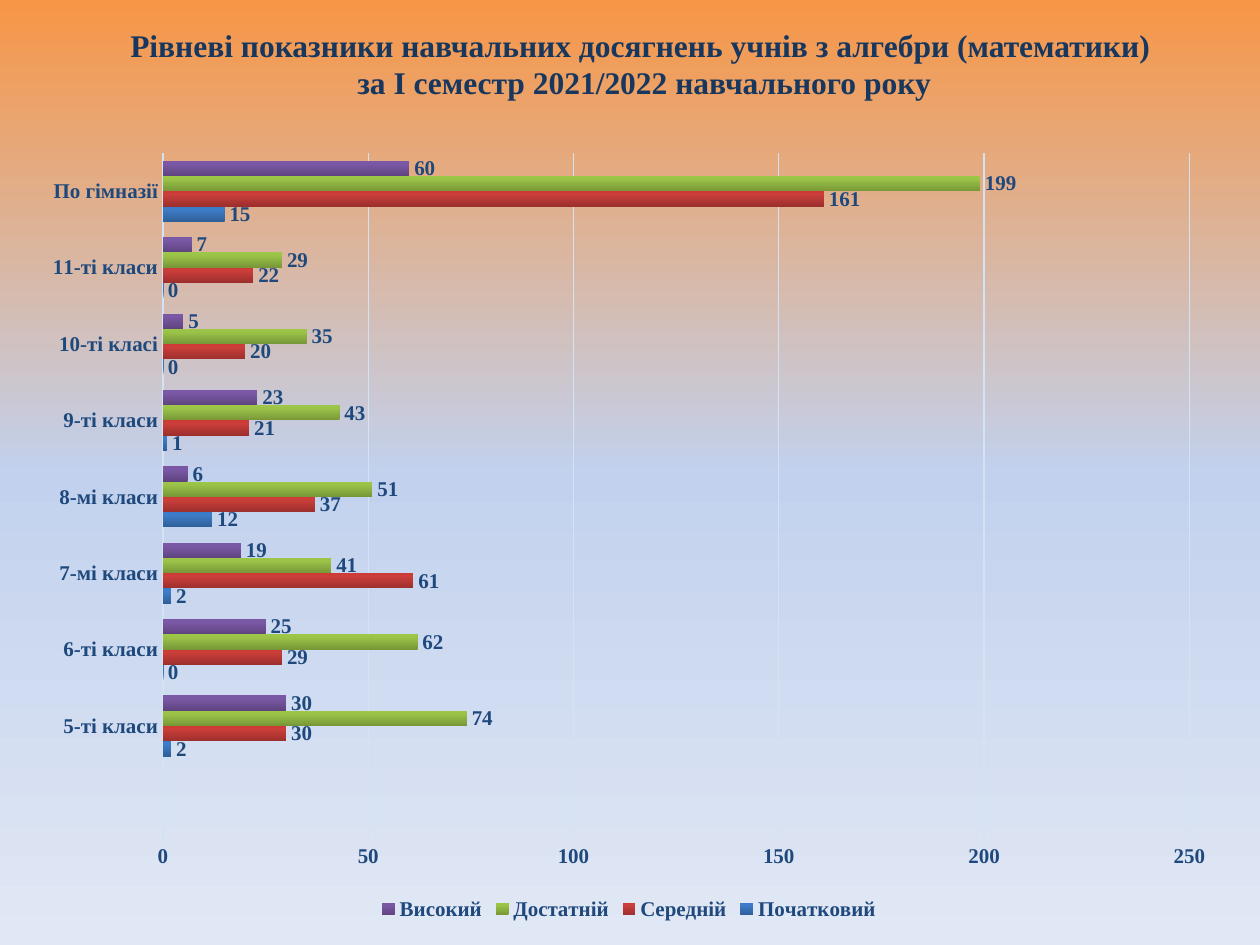
from copy import deepcopy

from pptx import Presentation
from pptx.chart.data import CategoryChartData
from pptx.dml.color import RGBColor
from pptx.enum.chart import (XL_CHART_TYPE, XL_LABEL_POSITION,
                             XL_LEGEND_POSITION, XL_TICK_MARK)
from pptx.enum.text import MSO_ANCHOR, PP_ALIGN
from pptx.util import Cm, Pt

BAR = XL_CHART_TYPE.BAR_CLUSTERED
OUTSIDE_END = XL_LABEL_POSITION.OUTSIDE_END
BOTTOM = XL_LEGEND_POSITION.BOTTOM
NO_TICK = XL_TICK_MARK.NONE
CENTER = PP_ALIGN.CENTER
MIDDLE = MSO_ANCHOR.MIDDLE

TITLE = ("Рівневі показники навчальних досягнень учнів з алгебри (математики)\n"
         " за І семестр 2021/2022 навчального року")
CLASSES = ["", "5-ті класи", "6-ті класи", "7-мі класи", "8-мі класи",
           "9-ті класи", "10-ті класі", "11-ті класи", "По гімназії"]
# Level: (pupils per class, gradient from bottom to top)
LEVELS = {
    "Початковий": ([None, 2, 0, 2, 12, 1, 0, 0, 15],
                   ["2F5F99", "3D7CC7", "3A7CCB"]),
    "Середній": ([None, 30, 29, 61, 37, 21, 20, 22, 161],
                 ["9C2F2D", "CB3E3A", "CE3B37"]),
    "Достатній": ([None, 74, 62, 41, 51, 43, 35, 29, 199],
                  ["779737", "9BC348", "9DC746"]),
    "Високий": ([None, 30, 25, 19, 6, 23, 5, 7, 60],
                ["5F4480", "7B58A6", "7C57A8"]),
}


def rgb(hex_color):
    return RGBColor.from_string(hex_color)


def style_font(font, size, color, bold=True, name="Times New Roman"):
    font.name, font.size, font.bold = name, Pt(size), bold
    font.color.rgb = rgb(color)


def write_text(frame, text, size=18, color="17375E", align=CENTER, anchor=MIDDLE):
    frame.word_wrap = True
    frame.vertical_anchor = anchor
    paragraph = frame.paragraphs[0]
    paragraph.alignment = align
    for number, line in enumerate(text.split("\n")):
        if number:
            paragraph.add_line_break()
        run = paragraph.add_run()
        run.text = line
        style_font(run.font, size, color)


def fill_gradient(fill, owner, colors, positions, angle):
    """Three-stop gradient; owner is the XML element that holds the fill."""
    fill.gradient()
    fill.gradient_angle = angle
    first_stop = owner.xpath(".//a:gsLst/a:gs")[0]
    first_stop.addnext(deepcopy(first_stop))
    for stop, color, position in zip(fill.gradient_stops, colors, positions):
        stop.color.rgb = rgb(color)
        stop.position = position


class SlideBuilder:
    label_color = "1F497D"
    grid_color = "D4E3F4"
    label_size = 12

    def __init__(self, slide):
        self.slide = slide

    def background(self, colors):
        fill_gradient(self.slide.background.fill, self.slide._element,
                      colors, [0, 0.5, 1], 270)

    def title(self, text, left, top, width, height):
        box = self.slide.shapes.add_textbox(Cm(left), Cm(top), Cm(width), Cm(height))
        write_text(box.text_frame, text)

    def label(self, font):
        style_font(font, self.label_size, self.label_color)

    def line(self, line):
        line.color.rgb = rgb(self.grid_color)
        line.width = Pt(0.75)

    def bar_chart(self, classes, levels, left, top, width, height):
        data = CategoryChartData()
        data.categories = classes
        for level, (pupils, _) in levels.items():
            data.add_series(level, pupils)
        chart = self.slide.shapes.add_chart(
            BAR, Cm(left), Cm(top), Cm(width), Cm(height), data).chart
        style_font(chart.font, 10, "000000", bold=False, name="Calibri")
        chart.has_title = False

        # Legend
        chart.has_legend = True
        chart.legend.position = BOTTOM
        chart.legend.include_in_layout = False
        self.label(chart.legend.font)

        # Axes
        for axis in (chart.category_axis, chart.value_axis):
            axis.major_tick_mark = axis.minor_tick_mark = NO_TICK
            self.label(axis.tick_labels.font)
        self.line(chart.category_axis.format.line)
        chart.value_axis.format.line.fill.background()
        chart.value_axis.has_major_gridlines = True
        self.line(chart.value_axis.major_gridlines.format.line)

        # Bars with their values
        plot = chart.plots[0]
        plot.gap_width = 100
        plot.overlap = 0
        plot.vary_by_categories = False
        for series, (_, colors) in zip(plot.series, levels.values()):
            fill_gradient(series.format.fill, series._element,
                          colors, [0, 0.8, 1], 90)
            series.invert_if_negative = False
            values = series.data_labels
            values.show_value = True
            values.position = OUTSIDE_END
            self.label(values.font)


def main():
    deck = Presentation()
    deck.slide_width, deck.slide_height = Cm(25.4), Cm(19.05)
    builder = SlideBuilder(deck.slides.add_slide(deck.slide_layouts[6]))
    builder.background(["F79646", "C2D1ED", "E1E8F5"])
    builder.title(TITLE, 1.2, 0.58, 23.42, 1.4)
    builder.bar_chart(CLASSES, LEVELS, 0.58, 2.77, 24.2, 15.88)
    deck.save("out.pptx")


if __name__ == "__main__":
    main()
